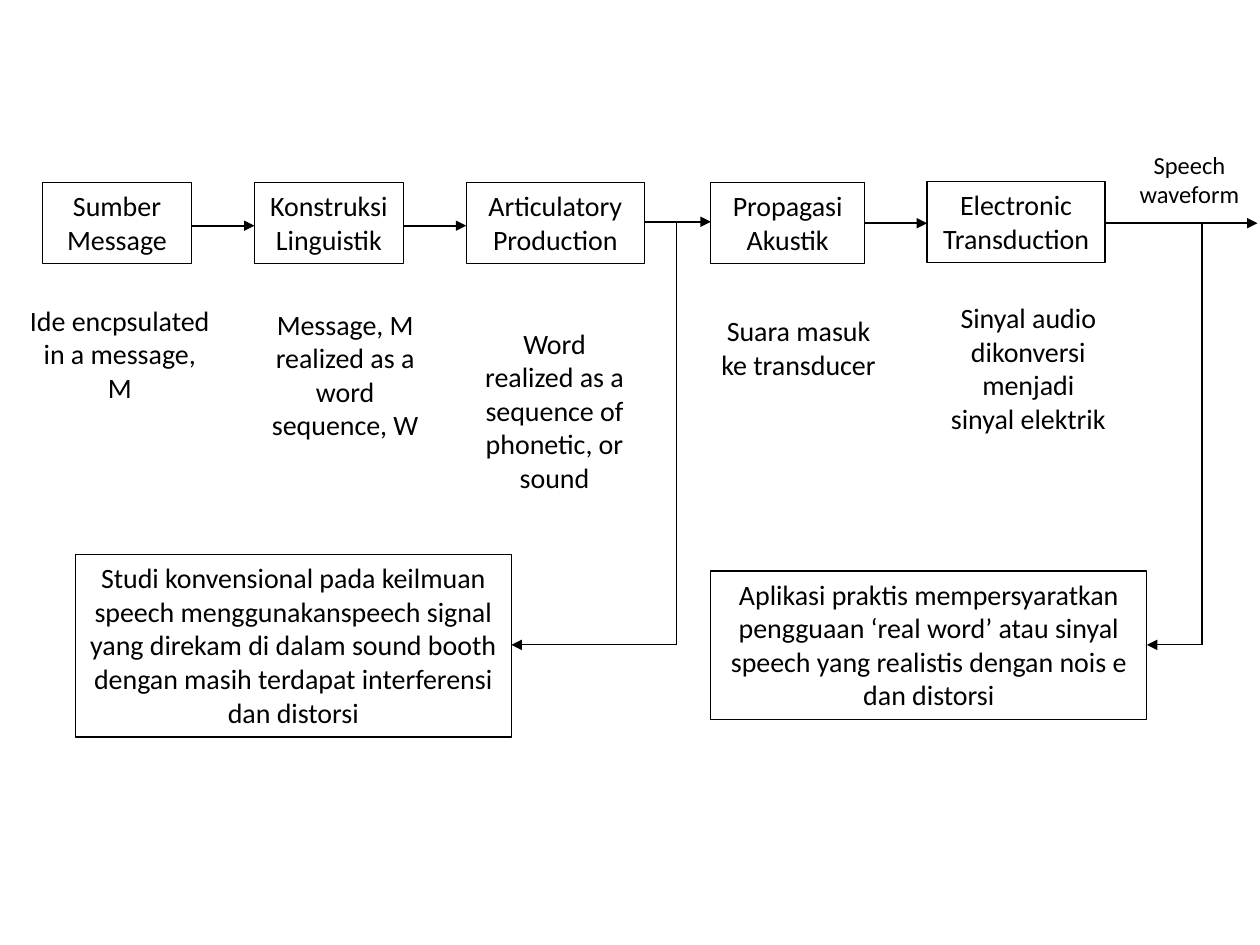
from pptx import Presentation
from pptx.dml.color import RGBColor
from pptx.enum import shapes, text
from pptx.oxml.ns import qn
from pptx.util import Cm, Pt
from lxml import etree

BLACK = RGBColor(0, 0, 0)
WHITE = RGBColor(255, 255, 255)

deck = Presentation()
deck.slide_width, deck.slide_height = Cm(25.4), Cm(19.05)
slide = deck.slides.add_slide(deck.slide_layouts[6])


def add_label(words, left, top, width, height, size=16, framed=False, fill=None):
    """Centred text that starts at the top, with a thin black frame if framed."""
    place = [Cm(n) for n in (left, top, width, height)]
    if framed:
        label = slide.shapes.add_shape(shapes.MSO_SHAPE.RECTANGLE, *place)
        label.shadow.inherit = False
        label.line.color.rgb = BLACK
        label.line.width = Pt(0.75)
        if fill is None:
            label.fill.background()
        else:
            label.fill.solid()
            label.fill.fore_color.rgb = fill
    else:
        label = slide.shapes.add_textbox(*place)
    frame = label.text_frame
    frame.word_wrap = True
    frame.auto_size = text.MSO_AUTO_SIZE.SHAPE_TO_FIT_TEXT
    frame.vertical_anchor = text.MSO_ANCHOR.TOP
    frame.text = words
    paragraph = frame.paragraphs[0]
    paragraph.alignment = text.PP_ALIGN.CENTER
    for run in paragraph.runs:
        run.font.name = "Calibri"
        run.font.size = Pt(size)
        run.font.color.rgb = BLACK


def add_line(x1, y1, x2, y2, weight=1, arrow=True):
    line = slide.shapes.add_connector(
        shapes.MSO_CONNECTOR.STRAIGHT, Cm(x1), Cm(y1), Cm(x2), Cm(y2))
    line.line.color.rgb = BLACK
    line.line.width = Pt(weight)
    if arrow:
        etree.SubElement(line.line._get_or_add_ln(), qn("a:tailEnd"), type="triangle")
    etree.SubElement(line._element.spPr, qn("a:effectLst"))


# Speech chain: box text, left, top, width, then the height of the arrow leaving it
stages = [
    ("Sumber Message", 0.86, 3.68, 3, 4.55),
    ("Konstruksi\vLinguistik", 5.13, 3.68, 3, 4.55),
    ("Articulatory Production", 9.4, 3.68, 3.59, 4.47),
    ("Propagasi Akustik", 14.33, 3.68, 3.1, 4.5),
    ("Electronic Transduction", 18.69, 3.66, 3.59, 4.5),
]
arrow_ends = [stage[1] for stage in stages[1:]] + [25.35]
for (words, left, top, width, arrow_y), arrow_end in zip(stages, arrow_ends):
    add_label(words, left, top, width, 1.63, framed=True)
    add_line(left + width, arrow_y, arrow_end, arrow_y)

add_label("Speech waveform", 22.53, 2.9, 2.9, 1.45, size=14)

# Explanation below each stage
explanations = [
    ("Ide encpsulated in a message, M", 0.33, 5.99, 4.17, 2.31),
    ("Message, M realized as a word sequence, W", 5.13, 6.07, 3.66, 3),
    ("Word realized as a sequence of phonetic, or sound", 9.35, 6.45, 3.66, 3.68),
    ("Suara masuk ke transducer", 14.27, 6.2, 3.66, 1.63),
    ("Sinyal audio dikonversi menjadi sinyal elektrik", 18.9, 5.94, 3.66, 3),
]
for explanation in explanations:
    add_label(*explanation)

# Uses of the signal, each fed by a branch from the chain
uses = [
    ("Studi konvensional pada keilmuan speech menggunakanspeech signal yang "
     "direkam di dalam sound booth dengan masih terdapat interferensi dan distorsi",
     1.52, 11.18, 3.68, 13.64),
    ("Aplikasi praktis mempersyaratkan pengguaan ‘real word’ atau sinyal speech "
     "yang realistis dengan nois e dan distorsi",
     14.33, 11.51, 3, 24.23),
]
USE_WIDTH, BRANCH_TOP, BRANCH_BOTTOM = 8.79, 4.47, 13
for words, left, top, height, branch_x in uses:
    add_label(words, left, top, USE_WIDTH, height, framed=True, fill=WHITE)
    add_line(branch_x, BRANCH_TOP, branch_x, BRANCH_BOTTOM, arrow=False)
    add_line(branch_x, BRANCH_BOTTOM, left + USE_WIDTH, BRANCH_BOTTOM, weight=0.5)

deck.save("out.pptx")
